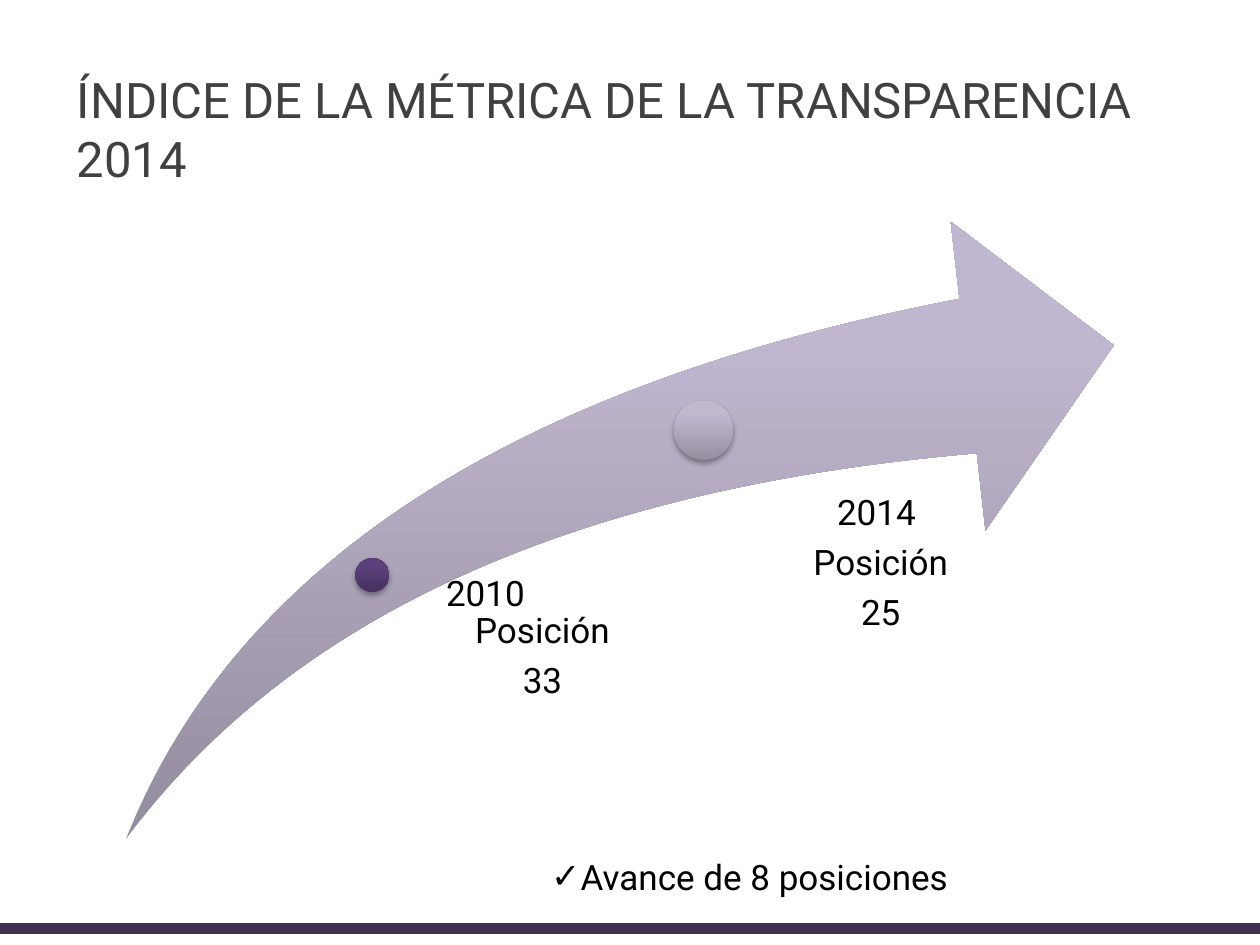
import copy
import dataclasses

import lxml.etree
import pptx
import pptx.dml.color
import pptx.enum.shapes
import pptx.enum.text
import pptx.oxml
import pptx.oxml.ns
import pptx.util

Inches = pptx.util.Inches
Pt = pptx.util.Pt
RGB = pptx.dml.color.RGBColor.from_string
SHAPE = pptx.enum.shapes.MSO_SHAPE
ALIGN = pptx.enum.text.PP_ALIGN
qn = pptx.oxml.ns.qn


@dataclasses.dataclass(frozen=True)
class Theme:
    """Hold the colours and type sizes of the slide."""
    font: str = "Roboto"
    title: str = "404040"
    text: str = "000000"
    rule: str = "403152"
    arrow: tuple = ("948C9F", "C0B6CF", "C1B6D0")
    first_dot: tuple = ("46325F", "5B417B", "5B407C")
    last_dot: tuple = ("968FA0", "C2B9D0", "C3BAD1")
    title_size: int = 28
    text_size: int = 20


THEME = Theme()


def apply(obj, values):
    """Set each attribute of obj from a dict."""
    for name, value in values.items():
        setattr(obj, name, value)


def place(sp, box):
    """Move and size a shape to a box given in inches."""
    apply(sp, dict(zip(("left", "top", "width", "height"), map(Inches, box))))


def format_frame(tf, left=0.1, top=0.05, right=0.1, bottom=0.05):
    """Give a text frame its insets, wrapping and top anchor."""
    apply(tf, {"word_wrap": True, "auto_size": pptx.enum.text.MSO_AUTO_SIZE.NONE,
               "vertical_anchor": pptx.enum.text.MSO_ANCHOR.TOP,
               "margin_left": Inches(left), "margin_top": Inches(top),
               "margin_right": Inches(right), "margin_bottom": Inches(bottom)})


def write(p, text, size, color, **layout):
    """Write one formatted run into a paragraph."""
    apply(p, layout)
    r = p.add_run()
    r.text = text
    apply(r.font, {"name": THEME.font, "size": Pt(size)})
    r.font.color.rgb = RGB(color)


def add_gradient_shape(s, kind, box, colors):
    """Add an unlined shape with a gradient that rises from its foot."""
    sp = s.shapes.add_shape(kind, *map(Inches, box))
    sp.shadow.inherit = False
    sp.line.fill.background()
    sp.fill.gradient()
    sp.fill.gradient_angle = 90
    stops = sp.fill._fill._gradFill.find(qn("a:gsLst"))
    stops.insert(1, copy.deepcopy(stops[0]))
    for stop, position, color in zip(sp.fill.gradient_stops, (0, 0.8, 1), colors):
        stop.color.rgb = RGB(color)
        stop.position = position
    return sp


def add_dot(s, box, colors):
    """Add a milestone dot with a soft shadow below."""
    sp = add_gradient_shape(s, SHAPE.OVAL, box, colors)
    effects = sp._element.spPr.find(qn("a:effectLst"))
    shadow = lxml.etree.SubElement(
        effects, qn("a:outerShdw"), blurRad=str(Pt(3.1)), dist=str(Pt(1.8)),
        dir="5400000", rotWithShape="0")
    color = lxml.etree.SubElement(shadow, qn("a:srgbClr"), val=THEME.text)
    lxml.etree.SubElement(color, qn("a:alpha"), val="35000")


def add_milestone(s, box, lines, left, top=0, year_indent=None):
    """Add the year and position lines of a milestone."""
    tf = s.shapes.add_textbox(*map(Inches, box)).text_frame
    format_frame(tf, left, top, 0, 0)
    for i, text in enumerate(lines):
        p = tf.paragraphs[0] if i == 0 else tf.add_paragraph()
        layout = {"alignment": ALIGN.CENTER, "line_spacing": 0.9, "space_after": Pt(7)}
        if i == 0 and year_indent is not None:
            layout.update(alignment=ALIGN.LEFT, space_after=Pt(0))
            p._p.get_or_add_pPr().set("marL", str(Inches(year_indent)))
        write(p, text, THEME.text_size, THEME.text, **layout)


def add_title(s, box):
    """Fill the title placeholder."""
    sp = s.shapes.title
    place(sp, box)
    format_frame(sp.text_frame)
    write(sp.text_frame.paragraphs[0], "ÍNDICE DE LA MÉTRICA DE LA TRANSPARENCIA 2014",
          THEME.title_size, THEME.title, alignment=ALIGN.LEFT)


def add_timeline(s, box):
    """Add the rising arrow with its two milestones."""
    x, y, w, h = box
    arrow = add_gradient_shape(s, SHAPE.SWOOSH_ARROW, box, THEME.arrow)
    for i in range(2):
        arrow.adjustments[i] = 0.25
    add_dot(s, (x + 1.82, y + 2.67, 0.27, 0.27), THEME.first_dot)
    add_milestone(s, (x + 2.34, y + 2.81, 1.78, h - 2.81),
                  ("2010", "Posición", "33"), left=0.15, year_indent=0.05)
    add_dot(s, (x + 4.35, y + 1.42, 0.47, 0.47), THEME.last_dot)
    add_milestone(s, (x + 4.59, y + 1.66, 2.55, h - 1.66),
                  ("2014 ", "Posición", "25"), left=0.25, top=0.51)


def add_conclusion(s, box):
    """Fill the body placeholder with the check-marked result."""
    sp = s.placeholders[1]
    place(sp, box)
    format_frame(sp.text_frame)
    p = sp.text_frame.paragraphs[0]
    pPr = p._p.get_or_add_pPr()
    apply(p, {"space_before": Pt(0)})
    pPr.set("marL", str(Inches(0.22)))
    pPr.set("indent", str(Inches(-0.22)))
    lxml.etree.SubElement(pPr, qn("a:buFont"), typeface=THEME.font)
    lxml.etree.SubElement(pPr, qn("a:buChar"), char="✓")
    write(p, "Avance de 8 posiciones ", THEME.text_size, THEME.text,
          alignment=ALIGN.CENTER)


def add_rule(s, box):
    """Add the rule along the foot of the slide."""
    x, y, w, h = map(Inches, box)
    line = s.shapes.add_connector(pptx.enum.shapes.MSO_CONNECTOR.STRAIGHT,
                                  x, y, x + w, y + h)
    line.line.color.rgb = RGB(THEME.rule)
    line.line.width = Pt(6)
    lxml.etree.SubElement(line._element.spPr, qn("a:effectLst"))


def main():
    """Build and save the slide."""
    prs = pptx.Presentation()
    apply(prs, {"slide_width": Inches(10), "slide_height": Inches(7.5)})
    s = prs.slides.add_slide(prs.slide_layouts[1])
    add_title(s, (0.51, 0.5, 8.74, 1.04))
    add_timeline(s, (1, 1.76, 7.84, 4.9))
    add_conclusion(s, (1.97, 6.74, 8.03, 0.44))
    add_rule(s, (-0.04, 7.37, 10.04, 0))
    prs.save("out.pptx")


if __name__ == "__main__":
    main()
